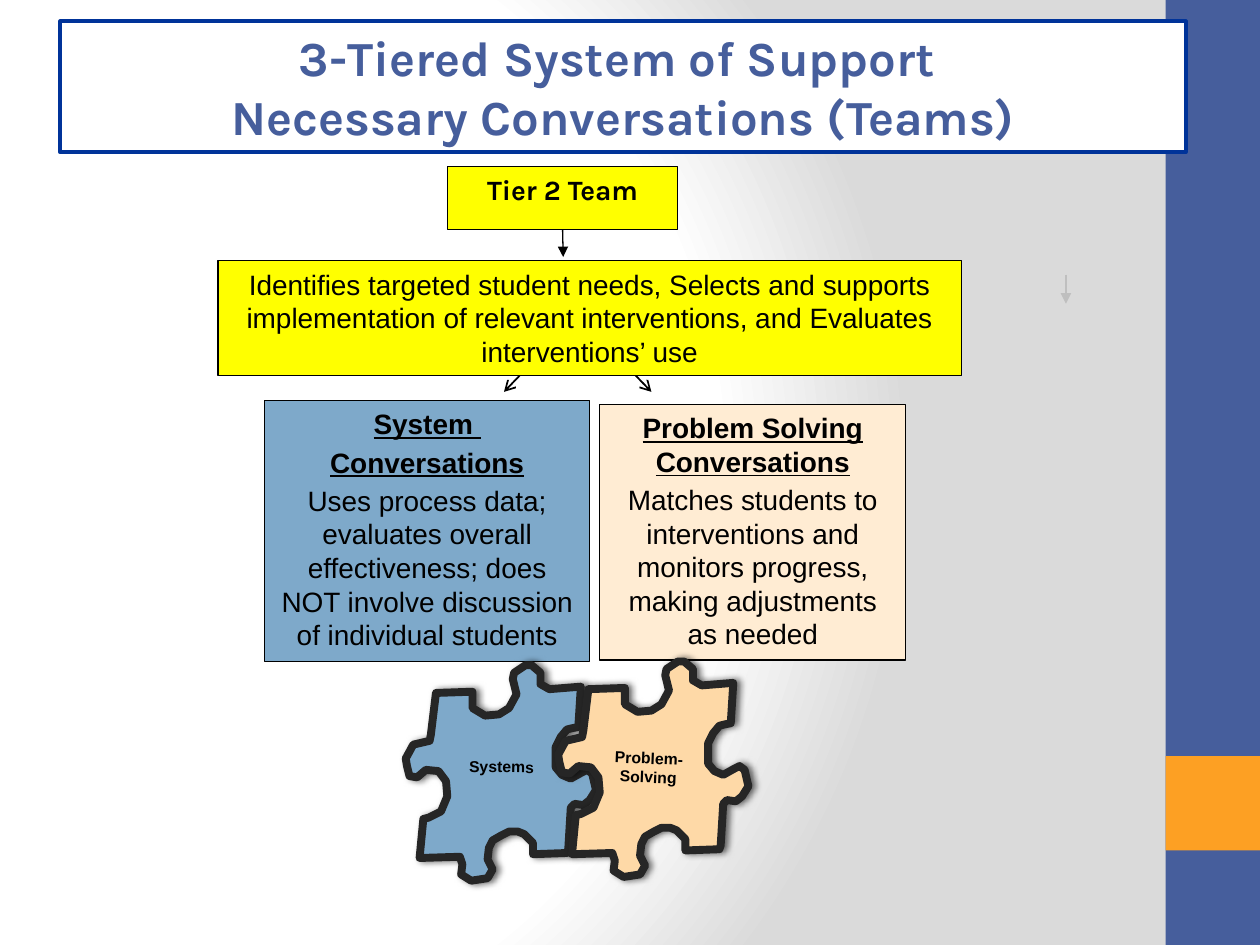
from lxml import etree
from pptx import Presentation
from pptx.dml.color import RGBColor
from pptx.enum.shapes import MSO_CONNECTOR, MSO_SHAPE
from pptx.enum.text import MSO_ANCHOR, PP_ALIGN
from pptx.oxml import parse_xml
from pptx.oxml.ns import qn
from pptx.util import Inches, Pt

RECT = MSO_SHAPE.RECTANGLE
STRAIGHT = MSO_CONNECTOR.STRAIGHT
CENTER = PP_ALIGN.CENTER
TOP = MSO_ANCHOR.TOP
NS = 'xmlns:a="http://schemas.openxmlformats.org/drawingml/2006/main"'


def color(hex_string):
    return RGBColor.from_string(hex_string)


def add_box(box, fill, line, width, paragraphs, font, size, before=0, text_color="000000"):
    """Draw a filled rectangle; paragraphs are (text, is_heading, is_underlined)."""
    sp = s.shapes.add_shape(RECT, *[Inches(v) for v in box])
    sp.shadow.inherit = False
    sp.fill.solid()
    sp.fill.fore_color.rgb = color(fill)
    if line:
        sp.line.color.rgb = color(line)
        sp.line.width = Pt(width)
    else:
        sp.line.fill.background()
    tf = sp.text_frame
    tf.word_wrap = True
    tf.vertical_anchor = TOP
    for i, (text, bold, underline) in enumerate(paragraphs):
        p = tf.paragraphs[0] if i == 0 else tf.add_paragraph()
        p.text = text
        p.alignment = CENTER
        p.space_before = Pt(before)
        f = p.runs[0].font
        f.name, f.size, f.bold, f.underline = font, Pt(size), bold, underline
        f.color.rgb = color(text_color)
    return sp


def add_arrow(start, end, line, width, head):
    c = s.shapes.add_connector(STRAIGHT, *[Inches(v) for v in start + end])
    c.line.color.rgb = color(line)
    c.line.width = Pt(width)
    etree.SubElement(c.line._get_or_add_ln(), qn("a:tailEnd"), type=head)
    etree.SubElement(c._element.spPr, qn("a:effectLst"))
    return c


prs = Presentation()
prs.slide_width, prs.slide_height = Inches(10), Inches(7.5)
s = prs.slides.add_slide(prs.slide_layouts[6])

# Background gradient
s.background.fill.solid()
solid = s.background._cSld.find(".//" + qn("a:solidFill"))
stops = "".join(
    f'<a:gs pos="{pos}000"><a:srgbClr val="{c}"/></a:gs>'
    for pos, c in [(0, "FFFFFF"), (75, "FFFFFF"), (100, "DADADA")])
solid.getparent().replace(solid, parse_xml(
    f'<a:gradFill {NS} rotWithShape="1"><a:gsLst>{stops}</a:gsLst><a:path path="circle">'
    '<a:fillToRect l="20000" t="50000" r="100000" b="50000"/></a:path></a:gradFill>'))

# Side band
add_box((9.25, 0, 0.75, 7.5), "465E9C", None, 0, [], "Karla", 16)
add_box((9.25, 6, 0.75, 0.75), "FDA023", None, 0, [], "Karla", 16)

# Team and conversation boxes
team = add_box((3.55, 1.32, 1.83, 0.5), "FFFF00", "000000", 0.75,
               [("Tier 2 Team", True, False)], "Karla", 16)
add_box((2.1, 3.18, 2.58, 2.07), "7EA9CA", "000000", 0.75, [
    ("System ", True, True),
    ("Conversations", True, True),
    ("Uses process data; evaluates overall effectiveness; does NOT involve "
     "discussion of individual students", False, False)], "Arial", 16, 2.7)
add_box((4.76, 3.21, 2.43, 2.03), "FFECD3", "000000", 0.75, [
    ("Problem Solving Conversations", True, True),
    ("Matches students to interventions and monitors progress, making "
     "adjustments as needed", False, False)], "Arial", 16, 2.7)
add_arrow((8.46, 2.18), (8.46, 2.41), "BFBFBF", 0.75, "triangle")

# Puzzle pieces: one outline, shifted for the second piece
PIECE = [
    (4.61, 5.45), (4.59, 5.77), (4.54, 5.78), (4.5, 5.79), (4.45, 5.85), (4.41, 5.93),
    (4.41, 5.99), (4.41, 6.09), (4.46, 6.15), (4.53, 6.18), (4.62, 6.13), (4.66, 6.11),
    (4.7, 6.14), (4.73, 6.27), (4.68, 6.35), (4.63, 6.39), (4.56, 6.38), (4.53, 6.41),
    (4.51, 6.74), (4.5, 6.77), (4.23, 6.78), (4.23, 6.69), (4.16, 6.62), (4.11, 6.6),
    (4.04, 6.6), (3.98, 6.63), (3.91, 6.67), (3.88, 6.73), (3.87, 6.82), (3.91, 6.9),
    (3.87, 6.97), (3.74, 6.99), (3.66, 6.94), (3.67, 6.86), (3.65, 6.8), (3.33, 6.81),
    (3.36, 6.5), (3.4, 6.49), (3.5, 6.44), (3.55, 6.32), (3.54, 6.2), (3.48, 6.12),
    (3.38, 6.11), (3.31, 6.17), (3.25, 6.16), (3.23, 6.08), (3.22, 6.02), (3.28, 5.91),
    (3.41, 5.88), (3.42, 5.83), (3.46, 5.5), (3.75, 5.49), (3.75, 5.62), (3.85, 5.68),
    (3.96, 5.67), (4.04, 5.62), (4.1, 5.51), (4.07, 5.39), (4.08, 5.34), (4.17, 5.28),
    (4.22, 5.28), (4.29, 5.34), (4.29, 5.43), (4.36, 5.47)]
pieces = [
    (0, 0, "7EA9CA", "Systems", (3.55, 5.96, 0.86, 0.35), 0.8),
    (1.21, -0.03, "FED9A7", "Problem-Solving", (4.72, 5.89, 0.85, 0.56), 2.3)]
for dx, dy, fill, label, box, angle in pieces:
    points = [(Inches(x + dx), Inches(y + dy)) for x, y in PIECE]
    builder = s.shapes.build_freeform(*points[0])
    builder.add_line_segments(points[1:], close=True)
    piece = builder.convert_to_shape()
    piece.fill.solid()
    piece.fill.fore_color.rgb = color(fill)
    piece.line.color.rgb = color("262626")
    piece.line.width = Pt(4.5)
    piece._element.spPr.append(parse_xml(
        f'<a:effectLst {NS}><a:outerShdw blurRad="{Pt(4)}" dist="{Pt(2)}" dir="0">'
        '<a:srgbClr val="000000"><a:alpha val="60000"/></a:srgbClr></a:outerShdw></a:effectLst>'))

    tb = s.shapes.add_textbox(*[Inches(v) for v in box])
    tb.rotation = angle
    tf = tb.text_frame
    tf.word_wrap = True
    tf.text = label
    p = tf.paragraphs[0]
    p.alignment = CENTER
    f = p.runs[0].font
    f.name, f.size, f.bold = "Arial", Pt(9), True
    f.color.rgb = color("000000")

# Title
add_box((0.48, 0.17, 8.93, 1.04), "FFFFFF", "003399", 2.25, [
    ("3-Tiered System of Support ", True, False),
    ("Necessary Conversations (Teams)", True, False)], "Karla", 28, text_color="465E9C")

# Flow from the team to its tasks and conversations
add_arrow((4.25, 2.85), (4, 3.11), "000000", 1, "arrow")
add_arrow((4.92, 2.85), (5.17, 3.11), "000000", 1, "arrow")
add_box((1.73, 2.07, 5.9, 0.91), "FFFF00", "000000", 0.75, [
    ("Identifies targeted student needs, Selects and supports implementation of "
     "relevant interventions, and Evaluates interventions’ use", False, False)],
    "Arial", 16, 2.7)
team_arrow = add_arrow((4.47, 1.82), (4.47, 2.04), "000000", 0.75, "triangle")
team_arrow.begin_connect(team, 2)

prs.save("out.pptx")
